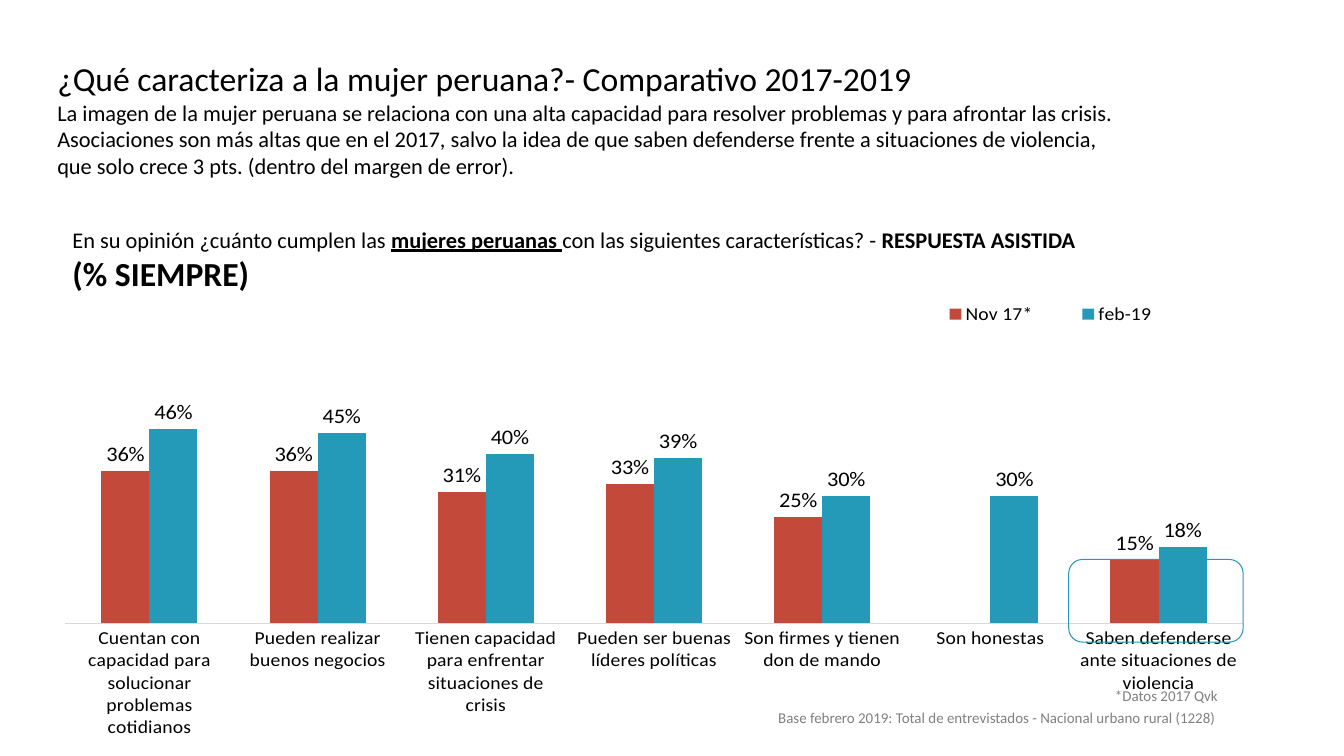
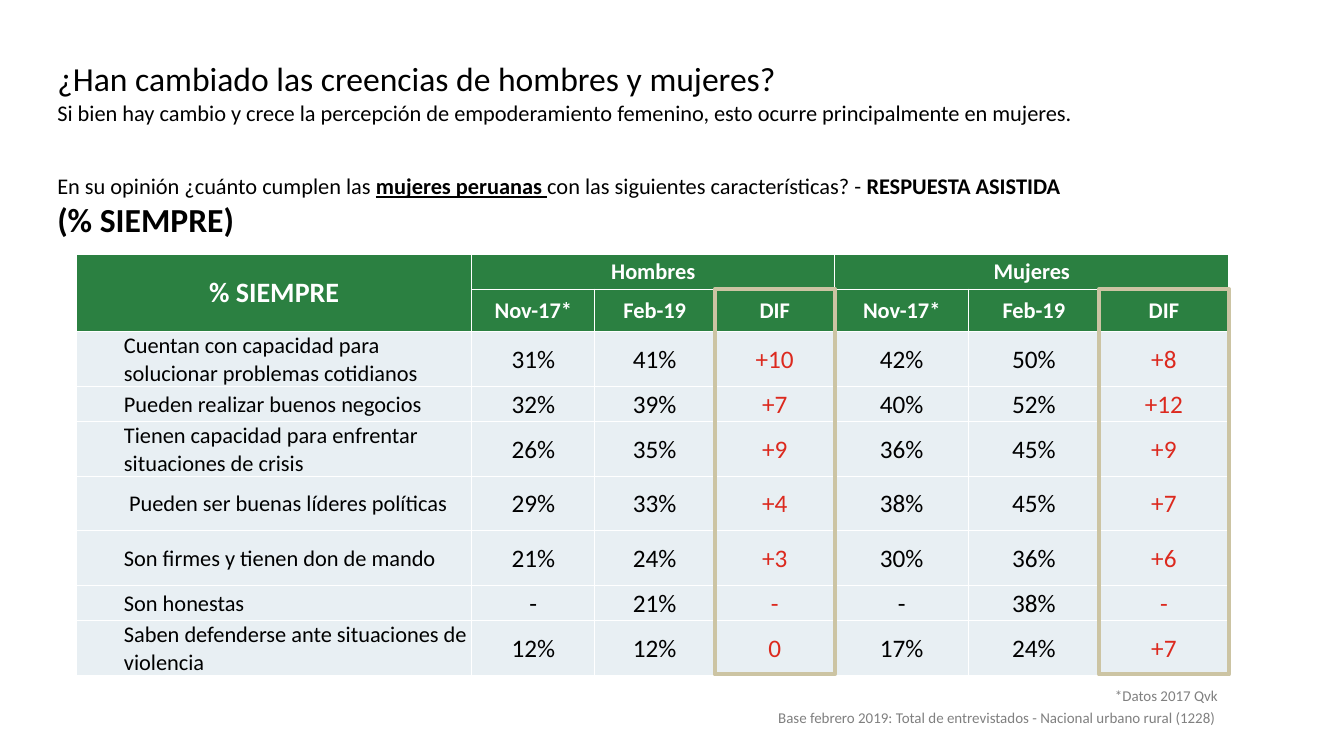
import dataclasses

import lxml.etree
import pptx
import pptx.chart.data
import pptx.dml.color
import pptx.enum.chart
import pptx.enum.shapes
import pptx.enum.text
import pptx.oxml.ns
import pptx.util

Inches = pptx.util.Inches
Pt = pptx.util.Pt
qn = pptx.oxml.ns.qn
ALIGN = pptx.enum.text.PP_ALIGN


@dataclasses.dataclass(frozen=True)
class Theme:
    font: str = "Calibri"
    chart_font: str = "Arial"
    text: str = "000000"
    muted: str = "808080"
    axis: str = "D9D9D9"
    before: str = "C34A3A"
    now: str = "2599B8"
    header: str = "2B8041"
    row: str = "E8EFF3"
    white: str = "FFFFFF"
    change: str = "DC291E"
    frame: str = "CCC4A3"
    title_size: float = 24
    head_size: float = 20
    value_size: float = 18
    body_size: float = 16
    label_size: float = 14
    note_size: float = 10.7


THEME = Theme()

QUESTION = [
    [("En su opinión ¿cuánto cumplen las ", {}),
     ("mujeres peruanas ", {"bold": True, "underline": True}),
     ("con las siguientes características? - ", {}),
     ("RESPUESTA ASISTIDA", {"bold": True})],
    [("(% SIEMPRE)", {"size": THEME.title_size, "bold": True})],
]

TRAITS = [
    "Cuentan con capacidad para solucionar problemas cotidianos",
    "Pueden realizar buenos negocios",
    "Tienen capacidad para enfrentar situaciones de crisis",
    " Pueden ser buenas líderes políticas",
    "Son firmes y tienen don de mando",
    "Son honestas",
    "Saben defenderse ante situaciones de violencia",
]
SERIES = [
    ("Nov 17*", THEME.before, [0.36, 0.36, 0.31, 0.33, 0.25, None, 0.15]),
    ("feb-19", THEME.now, [0.46, 0.45, 0.40, 0.39, 0.30, 0.30, 0.18]),
]

# Men then women: Nov-17, Feb-19, difference
GROUPS = ["Hombres", "Mujeres"]
PERIODS = ["Nov-17*", "Feb-19", "DIF"]
SHARES = [
    ["31%", "41%", "+10", "42%", "50%", "+8"],
    ["32%", "39%", "+7", "40%", "52%", "+12"],
    ["26%", "35%", "+9", "36%", "45%", "+9"],
    ["29%", "33%", "+4", "38%", "45%", "+7"],
    ["21%", "24%", "+3", "30%", "36%", "+6"],
    ["-", "21%", "-", "-", "38%", "-"],
    ["12%", "12%", "0", "17%", "24%", "+7"],
]
TABLE_LEFT, TABLE_TOP = 0.76, 2.52
COLUMNS = [3.92, 1.22, 1.19, 1.19, 1.33, 1.29, 1.29]
ROWS = [0.35, 0.42, 0.54, 0.35, 0.54, 0.54, 0.54, 0.35, 0.54]


def rgb(color):
    return pptx.dml.color.RGBColor.from_string(color)


def style_font(font, size, color=THEME.text, bold=False, underline=False, name=THEME.font):
    font.name, font.size = name, Pt(size)
    font.bold, font.underline = bold, underline
    font.color.rgb = rgb(color)


def add_run(paragraph, text, size=THEME.body_size, **style):
    run = paragraph.add_run()
    run.text = text
    style_font(run.font, size, **style)


def add_text(slide, box, paragraphs, align=ALIGN.LEFT, spacing=1.0):
    frame = slide.shapes.add_textbox(*map(Inches, box)).text_frame
    frame.word_wrap = True
    for index, runs in enumerate(paragraphs):
        paragraph = frame.add_paragraph() if index else frame.paragraphs[0]
        paragraph.alignment, paragraph.line_spacing = align, spacing
        for text, style in runs:
            add_run(paragraph, text, **style)


def add_note(slide, box, text):
    style = {"size": THEME.note_size, "color": THEME.muted}
    add_text(slide, box, [[(text, style)]], ALIGN.JUSTIFY, 0.9)


def add_outline(slide, preset, box, color, weight):
    outline = slide.shapes.add_shape(preset, *map(Inches, box))
    outline.shadow.inherit = False
    outline.fill.background()
    outline.line.color.rgb = rgb(color)
    outline.line.width = Pt(weight)


def add_page(deck, title, message, question_at):
    """Slide with heading, survey question and the two source notes."""
    slide = deck.slides.add_slide(deck.slide_layouts[6])
    add_text(slide, (0.47, 0.53, 10.7, 0.91),
             [[(title, {"size": THEME.title_size})], [(message, {})]])
    add_text(slide, (*question_at, 11.4, 0.77), QUESTION)
    add_note(slide, (7.62, 7, 5.6, 0.26),
             "Base febrero 2019: Total de entrevistados - Nacional urbano rural (1228)")
    add_note(slide, (10.96, 6.78, 1.4, 0.26), "*Datos 2017 Qvk")
    return slide


def place_in_chart(parent, index, box, inner=False):
    """Fix a chart part at x, y, width, height as shares of the chart."""
    for old in parent.findall(qn("c:layout")):
        parent.remove(old)
    layout = lxml.etree.Element(qn("c:layout"))
    manual = lxml.etree.SubElement(layout, qn("c:manualLayout"))
    settings = [("layoutTarget", "inner")] if inner else []
    settings += [("xMode", "edge"), ("yMode", "edge"), *zip("xywh", box)]
    for tag, value in settings:
        lxml.etree.SubElement(manual, qn("c:" + tag)).set("val", str(value))
    parent.insert(index, layout)


def add_comparison_chart(slide, box):
    enums = pptx.enum.chart
    data = pptx.chart.data.CategoryChartData(number_format="0%")
    data.categories = [trait.strip() for trait in TRAITS]
    for name, _, values in SERIES:
        data.add_series(name, values)
    chart = slide.shapes.add_chart(
        enums.XL_CHART_TYPE.COLUMN_CLUSTERED, *map(Inches, box), data).chart
    chart.has_title = False
    style_font(chart.font, 10, name=THEME.chart_font)

    # Bars and their labels
    plot = chart.plots[0]
    plot.gap_width, plot.overlap, plot.vary_by_categories = 150, 0, False
    for series, (_, color, _) in zip(plot.series, SERIES):
        series.format.fill.solid()
        series.format.fill.fore_color.rgb = rgb(color)
        labels = series.data_labels
        labels.show_value = True
        labels.number_format, labels.number_format_is_linked = "0%", False
        labels.position = enums.XL_LABEL_POSITION.OUTSIDE_END
        style_font(labels.font, THEME.body_size)

    # Axes
    traits, shares = chart.category_axis, chart.value_axis
    for axis in (traits, shares):
        axis.has_major_gridlines = False
        axis.major_tick_mark = axis.minor_tick_mark = enums.XL_TICK_MARK.NONE
    style_font(traits.tick_labels.font, THEME.label_size)
    traits.format.line.color.rgb = rgb(THEME.axis)
    traits.format.line.width = Pt(0.75)
    shares.minimum_scale, shares.maximum_scale = 0, 0.53
    shares.tick_label_position = enums.XL_TICK_LABEL_POSITION.NONE
    shares.format.line.fill.background()

    # Legend and placement
    chart.has_legend = True
    legend = chart.legend
    legend.position = enums.XL_LEGEND_POSITION.TOP
    legend.include_in_layout = False
    style_font(legend.font, THEME.label_size)
    place_in_chart(legend._element, 1, (0.72, 0.01, 0.24, 0.09))
    plot_area = chart._chartSpace.find(".//" + qn("c:plotArea"))
    place_in_chart(plot_area, 0, (0.02, 0.26, 0.98, 0.54), inner=True)


def add_borders(cell):
    properties = cell._tc.get_or_add_tcPr()
    for index, side in enumerate("LRTB"):
        line = lxml.etree.Element(qn("a:ln" + side), w=str(Pt(1)))
        fill = lxml.etree.SubElement(line, qn("a:solidFill"))
        lxml.etree.SubElement(fill, qn("a:srgbClr")).set("val", THEME.white)
        properties.insert(index, line)


def fill_cell(cell, text, fill, align=ALIGN.CENTER, indent=0.01, **style):
    cell.fill.solid()
    cell.fill.fore_color.rgb = rgb(fill)
    add_borders(cell)
    cell.margin_left = Inches(indent)
    cell.margin_right = cell.margin_top = Inches(0.01)
    cell.margin_bottom = 0
    cell.vertical_anchor = pptx.enum.text.MSO_ANCHOR.MIDDLE
    paragraph = cell.text_frame.paragraphs[0]
    paragraph.alignment = align
    if text:
        add_run(paragraph, text, **style)


def add_gender_table(slide):
    table = slide.shapes.add_table(
        len(ROWS), len(COLUMNS), Inches(TABLE_LEFT), Inches(TABLE_TOP),
        Inches(sum(COLUMNS)), Inches(sum(ROWS))).table
    table.first_row = table.horz_banding = False
    for column, width in zip(table.columns, COLUMNS):
        column.width = Inches(width)
    for row, height in zip(table.rows, ROWS):
        row.height = Inches(height)

    # Two header rows: groups over periods
    group_row = ["% SIEMPRE"]
    for group in GROUPS:
        group_row += [group, "", ""]
    for row, texts in enumerate([group_row, ["", *PERIODS * len(GROUPS)]]):
        for column, text in enumerate(texts):
            size = THEME.body_size if column else THEME.head_size
            fill_cell(table.cell(row, column), text, THEME.header,
                      size=size, color=THEME.white, bold=True)
    table.cell(0, 0).merge(table.cell(1, 0))
    for first in (1, 4):
        table.cell(0, first).merge(table.cell(0, first + 2))

    # One row per trait
    for row, (trait, shares) in enumerate(zip(TRAITS, SHARES), start=2):
        fill_cell(table.cell(row, 0), trait, THEME.row, ALIGN.LEFT, 0.47)
        for column, share in enumerate(shares, start=1):
            color = THEME.text if column % 3 else THEME.change
            fill_cell(table.cell(row, column), share, THEME.row,
                      size=THEME.value_size, color=color)

    # Frames around the difference columns
    for column in (3, 6):
        box = (TABLE_LEFT + sum(COLUMNS[:column]), TABLE_TOP + ROWS[0],
               COLUMNS[column], sum(ROWS[1:]))
        add_outline(slide, pptx.enum.shapes.MSO_SHAPE.RECTANGLE, box, THEME.frame, 3)


def main():
    deck = pptx.Presentation()
    deck.slide_width, deck.slide_height = Inches(13.33), Inches(7.5)

    # Comparison of both surveys
    comparison = add_page(
        deck, "¿Qué caracteriza a la mujer peruana?- Comparativo 2017-2019",
        "La imagen de la mujer peruana se relaciona con una alta capacidad para resolver "
        "problemas y para afrontar las crisis. Asociaciones son más altas que en el 2017, "
        "salvo la idea de que saben defenderse frente a situaciones de violencia, que solo "
        "crece 3 pts. (dentro del margen de error).", (0.62, 2.19))
    add_comparison_chart(comparison, (0.41, 2.89, 11.92, 4.44))
    add_outline(comparison, pptx.enum.shapes.MSO_SHAPE.ROUNDED_RECTANGLE,
                (10.6, 5.55, 1.73, 0.82), THEME.now, 0.75)

    # Beliefs of men and women
    beliefs = add_page(
        deck, "¿Han cambiado las creencias de hombres y mujeres?",
        "Si bien hay cambio y crece la percepción de empoderamiento femenino, esto ocurre "
        "principalmente en mujeres.", (0.47, 1.66))
    add_gender_table(beliefs)

    deck.save("out.pptx")


if __name__ == "__main__":
    main()
